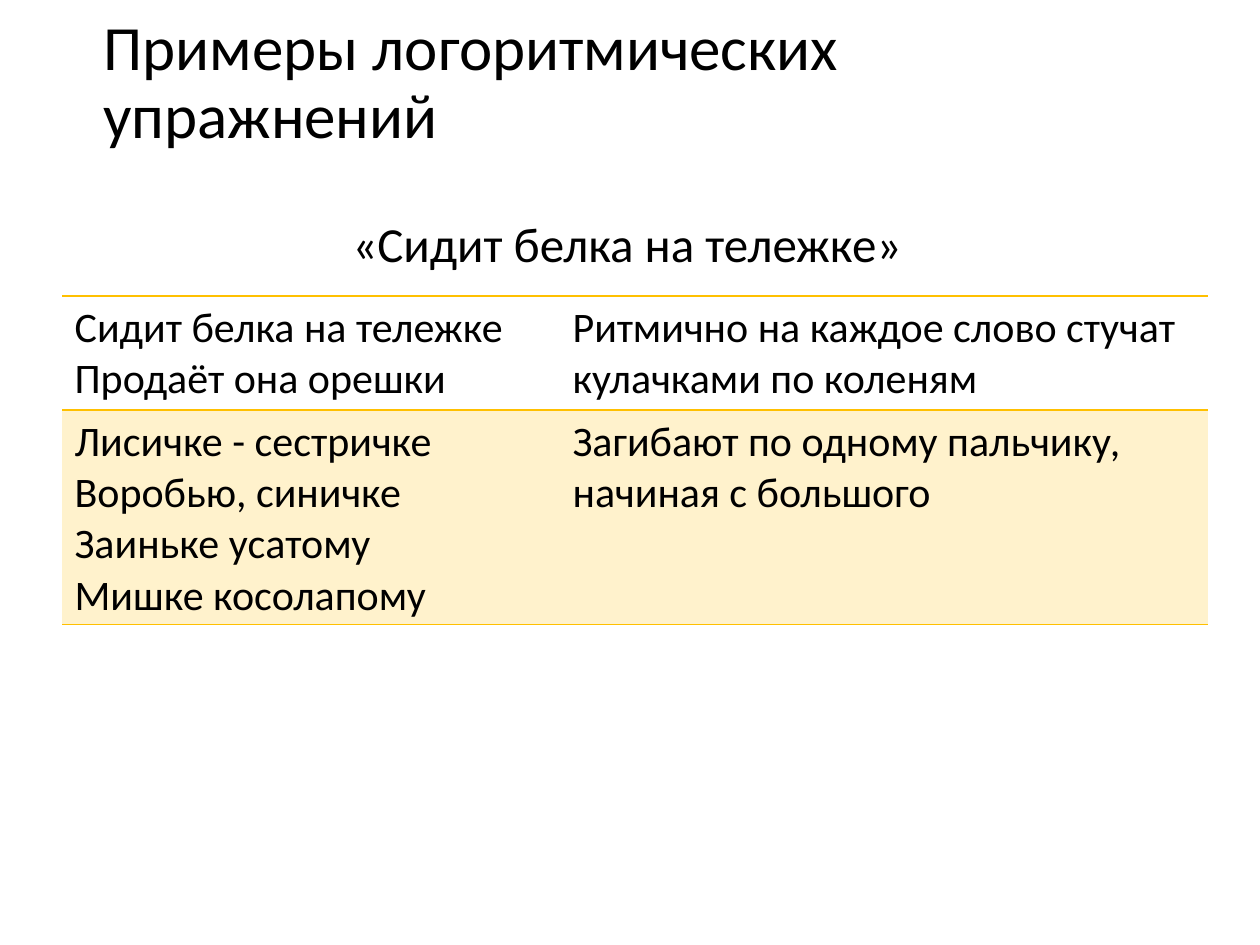
from dataclasses import dataclass
from typing import NamedTuple

from lxml.etree import SubElement
from pptx import Presentation
from pptx.dml.color import RGBColor
from pptx.enum.text import MSO_ANCHOR, MSO_AUTO_SIZE, PP_ALIGN
from pptx.oxml.ns import qn
from pptx.util import Cm, Pt


@dataclass(frozen=True)
class Theme:
    font: str = "Calibri"
    text: RGBColor = RGBColor(0, 0, 0)
    accent: RGBColor = RGBColor(0xFF, 0xC0, 0x00)
    band: RGBColor = RGBColor(0xFF, 0xF2, 0xCC)
    title_size: Pt = Pt(36)
    subtitle_size: Pt = Pt(28)
    table_size: Pt = Pt(24)
    rule_width: Pt = Pt(1)


class Box(NamedTuple):
    left: Cm
    top: Cm
    width: Cm
    height: Cm


class Exercise(NamedTuple):
    verse: str
    movement: str
    height: Cm
    banded: bool


THEME = Theme()
PLAIN_TABLE_STYLE = "{2D5ABB26-0587-4C30-8999-92F81FD0307C}"
TITLE_BOX = Box(Cm(1.83), Cm(0.33), Cm(21.77), Cm(2.72))
SUBTITLE_BOX = Box(Cm(1.7), Cm(4.32), Cm(21.87), Cm(13.08))
TABLE_BOX = Box(Cm(1.25), Cm(5.97), Cm(23.1), Cm(6.6))
COLUMN_WIDTHS = (Cm(10.04), Cm(13.06))
EXERCISES = (
    Exercise(
        "Сидит белка на тележке\nПродаёт она орешки",
        "Ритмично на каждое слово стучат кулачками по коленям",
        Cm(2.3),
        False,
    ),
    Exercise(
        "Лисичке - сестричке\nВоробью, синичке\nЗаиньке усатому\nМишке косолапому",
        "Загибают по одному пальчику, начиная с большого",
        Cm(4.3),
        True,
    ),
)


def write_text(text_frame, text: str, size: Pt, **paragraph_format) -> None:
    """Fill a text frame, one paragraph per line."""
    text_frame.text = text
    font_format = {"name": THEME.font, "size": size, "bold": False}
    for paragraph in text_frame.paragraphs:
        for name, value in paragraph_format.items():
            setattr(paragraph, name, value)
        for name, value in font_format.items():
            setattr(paragraph.font, name, value)
        paragraph.font.color.rgb = THEME.text


def add_rule(cell, side: str) -> None:
    """Draw an accent line on one side of a cell."""
    line = SubElement(cell._tc.get_or_add_tcPr(), qn(f"a:{side}"), w=str(THEME.rule_width))
    fill = SubElement(line, qn("a:solidFill"))
    SubElement(fill, qn("a:srgbClr"), val=str(THEME.accent))


def format_cell(cell, text: str, first: bool, banded: bool) -> None:
    write_text(cell.text_frame, text, THEME.table_size)
    # Borders go before the fill in the cell properties
    if first:
        add_rule(cell, "lnT")
    add_rule(cell, "lnB")
    if banded:
        cell.fill.solid()
        cell.fill.fore_color.rgb = THEME.band
    else:
        cell.fill.background()


def add_exercise_table(slide) -> None:
    table = slide.shapes.add_table(len(EXERCISES), len(COLUMN_WIDTHS), *TABLE_BOX).table
    table.first_row = table.horz_banding = False
    table._tbl.tblPr.find(qn("a:tableStyleId")).text = PLAIN_TABLE_STYLE
    for column, width in zip(table.columns, COLUMN_WIDTHS):
        column.width = width
    for index, exercise in enumerate(EXERCISES):
        row = table.rows[index]
        row.height = exercise.height
        for cell, text in zip(row.cells, (exercise.verse, exercise.movement)):
            format_cell(cell, text, index == 0, exercise.banded)


def main() -> None:
    presentation = Presentation()
    presentation.slide_width, presentation.slide_height = Cm(25.4), Cm(19.05)
    slide = presentation.slides.add_slide(presentation.slide_layouts[5])

    # Title
    title = slide.shapes.title
    for name, value in TITLE_BOX._asdict().items():
        setattr(title, name, value)
    title.text_frame.auto_size = MSO_AUTO_SIZE.NONE
    title.text_frame.vertical_anchor = MSO_ANCHOR.MIDDLE
    write_text(title.text_frame, "Примеры логоритмических упражнений", THEME.title_size,
               alignment=PP_ALIGN.LEFT, line_spacing=0.9)

    # Name of the rhyme
    subtitle = slide.shapes.add_textbox(*SUBTITLE_BOX)
    subtitle.text_frame.word_wrap = True
    write_text(subtitle.text_frame, "«Сидит белка на тележке»", THEME.subtitle_size,
               alignment=PP_ALIGN.CENTER, line_spacing=0.9)

    # Verses and movements
    add_exercise_table(slide)
    presentation.save("out.pptx")


if __name__ == "__main__":
    main()
